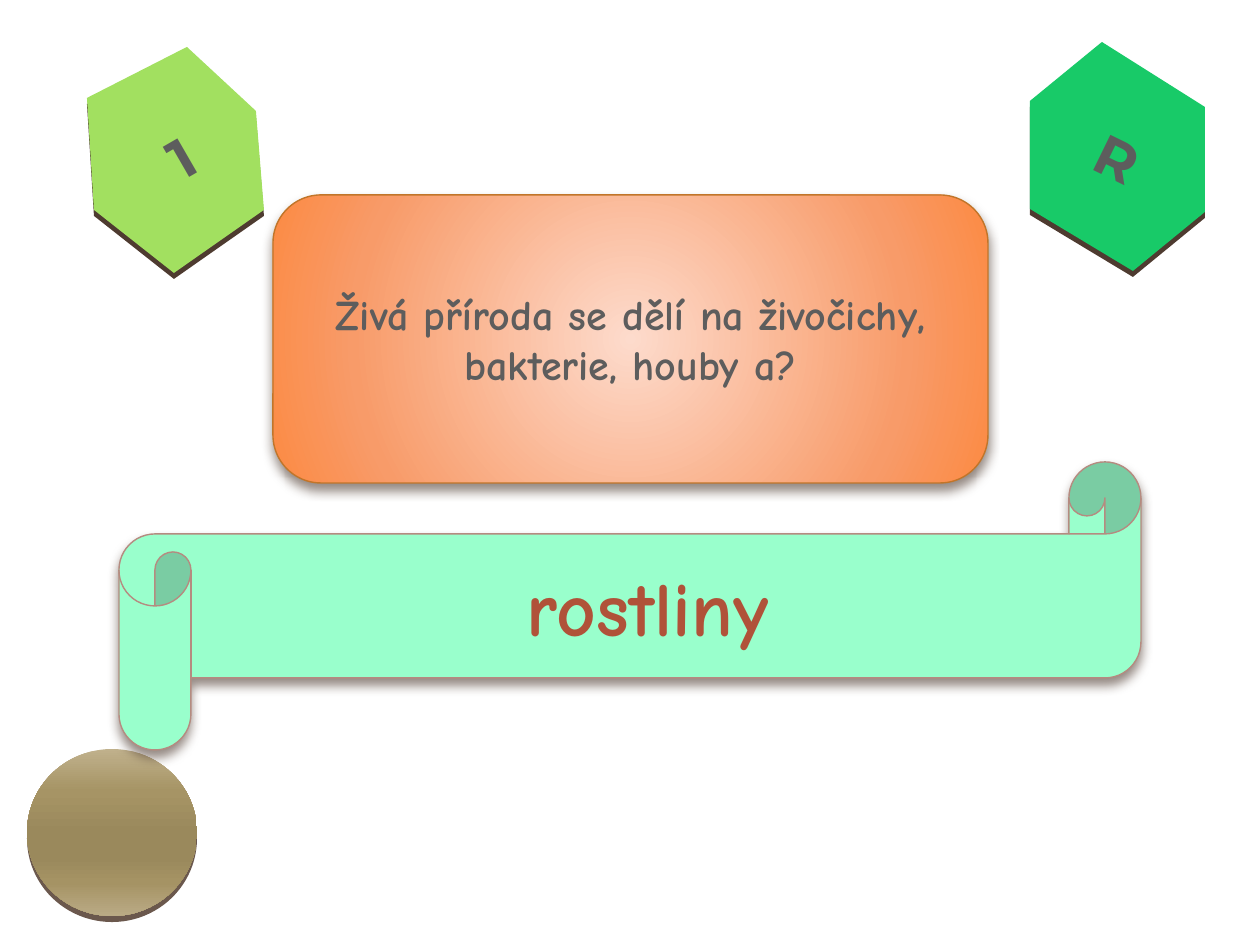
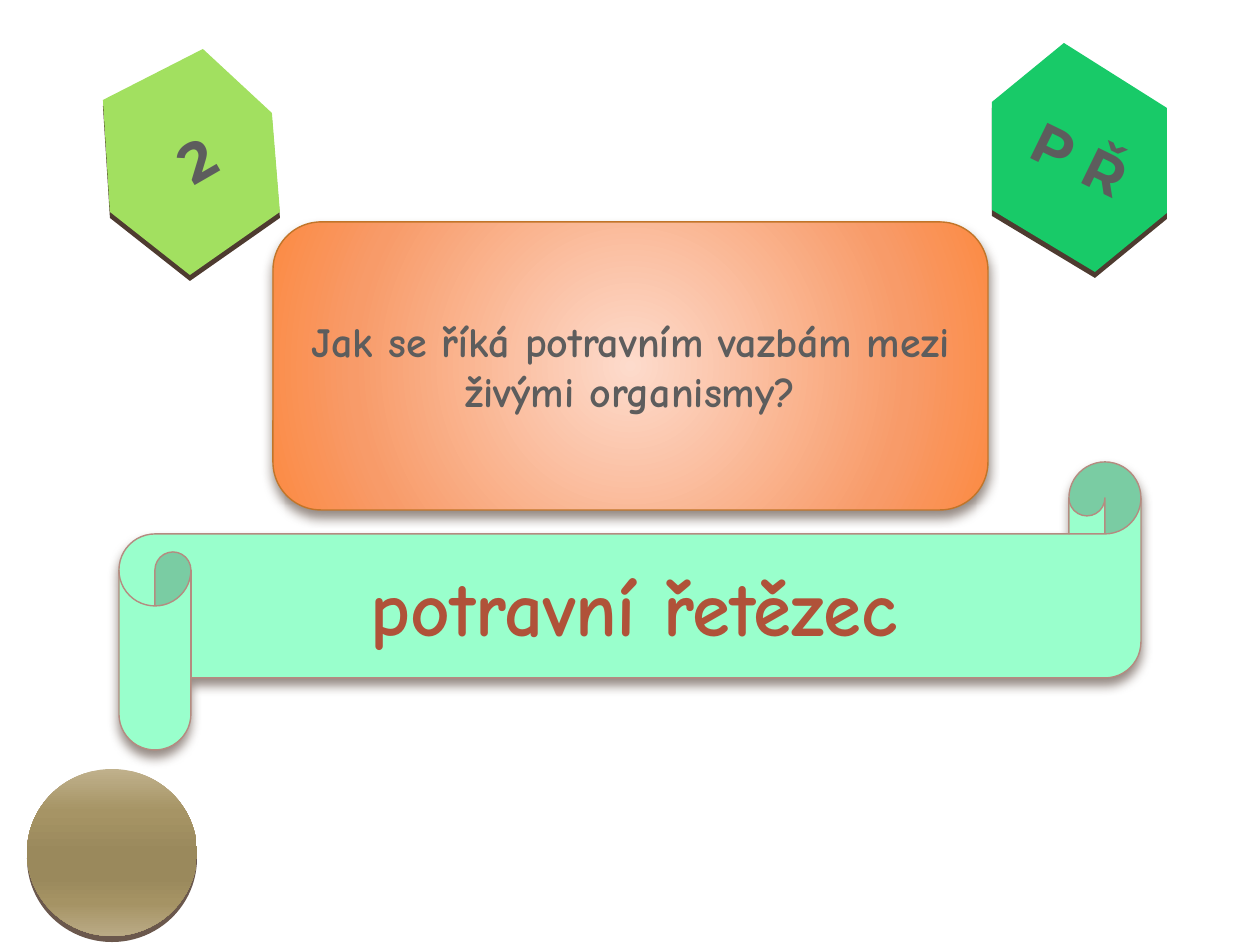
from typing import NamedTuple

import pptx
import pptx.dml.color
import pptx.enum.shapes
import pptx.enum.text
import pptx.oxml
import pptx.oxml.ns
import pptx.shapes.autoshape
import pptx.shapes.base
import pptx.slide
import pptx.util

EMU_PER_PX = 914400 / 126
SLIDE_WIDTH, SLIDE_HEIGHT = 1260, 945

RGBColor = pptx.dml.color.RGBColor
NUMBER_GREEN = RGBColor(0xA2, 0xE0, 0x60)
LETTER_GREEN = RGBColor(0x18, 0xCA, 0x68)
DARK_BROWN = RGBColor(0x4E, 0x3B, 0x30)
DISC_EDGE = RGBColor(0x6B, 0x58, 0x4D)
CARD_LINE = RGBColor(0xC1, 0x75, 0x29)
SCROLL_FILL = RGBColor(0x99, 0xFF, 0xCC)
SCROLL_LINE = RGBColor(0xB5, 0x8B, 0x80)
GRAY_TEXT = RGBColor(0x5D, 0x5D, 0x5D)
ANSWER_TEXT = RGBColor(0xB0, 0x52, 0x39)

CARD_STOPS = {0: "FDDBCC", 72: "F89B69", 100: "FC8A43"}
DISC_STOPS = {0: "C0B18C", 25: "A69465", 50: "9A895C", 65: "9A895C", 80: "A59364", 100: "BAAA85"}
RADIAL = '<a:path path="circle"><a:fillToRect l="50000" t="50000" r="50000" b="50000"/></a:path>'
VERTICAL = '<a:lin ang="5400000" scaled="0"/>'

BADGE_FONT = {"name": "Montserrat", "size": pptx.util.Pt(32), "bold": True}
QUESTION_FONT = {"name": "Comic Neue", "size": pptx.util.Pt(24), "bold": True}
ANSWER_FONT = {"name": "Comic Neue", "size": pptx.util.Pt(44), "bold": True}
EXTRUSION = 6


class Box(NamedTuple):
    left: int
    top: int
    width: int
    height: int


class BadgeStyle(NamedTuple):
    corners: tuple[tuple[int, int], ...]
    fill: RGBColor
    text_angle: int


class QuizSlide(NamedTuple):
    number: str
    number_center: tuple[int, int]
    letters: str
    letters_center: tuple[int, int]
    question: str
    question_top: int
    answer: str
    disc_top: int


NUMBER_BADGE = BadgeStyle(
    ((6, -110), (75, -46), (83, 53), (-7, 116), (-87, 53), (-94, -59)), NUMBER_GREEN, -30)
LETTER_BADGE = BadgeStyle(
    ((-16, -115), (87, -50), (87, 55), (15, 114), (-88, 52), (-88, -56)), LETTER_GREEN, 26)

QUIZ = (
    QuizSlide("1", (181, 157), "R", (1118, 157),
              "Živá příroda se dělí na živočichy, bakterie, houby a?", 195, "rostliny", 749),
    QuizSlide("2", (197, 159), "P Ř", (1080, 158),
              "Jak se říká potravním vazbám mezi živými organismy?", 222, "potravní řetězec ", 769),
)


def emu(px: int) -> int:
    return round(px * EMU_PER_PX)


def write_text(shape: pptx.shapes.base.BaseShape, text: str, font: dict, color: RGBColor) -> None:
    frame = shape.text_frame
    frame.word_wrap = True
    frame.vertical_anchor = pptx.enum.text.MSO_ANCHOR.MIDDLE
    paragraph = frame.paragraphs[0]
    paragraph.alignment = pptx.enum.text.PP_ALIGN.CENTER
    run = paragraph.add_run()
    run.text = text
    for attribute, value in font.items():
        setattr(run.font, attribute, value)
    run.font.color.rgb = color


def set_fill(shape: pptx.shapes.autoshape.Shape, color: RGBColor) -> None:
    shape.fill.solid()
    shape.fill.fore_color.rgb = color


def set_line(shape: pptx.shapes.autoshape.Shape, color: RGBColor) -> None:
    shape.line.color.rgb = color
    shape.line.width = pptx.util.Pt(0.79)


def set_gradient(shape: pptx.shapes.autoshape.Shape, stops: dict[int, str], direction: str) -> None:
    shape.fill.gradient()
    stop_xml = "".join(f'<a:gs pos="{position * 1000}"><a:srgbClr val="{color}"/></a:gs>'
                       for position, color in stops.items())
    gradient = pptx.oxml.parse_xml(
        f'<a:gradFill {pptx.oxml.ns.nsdecls("a")} rotWithShape="1">'
        f'<a:gsLst>{stop_xml}</a:gsLst>{direction}</a:gradFill>')
    properties = shape._element.spPr
    properties.replace(properties.find(pptx.oxml.ns.qn("a:gradFill")), gradient)


def add_shadow(shape: pptx.shapes.autoshape.Shape) -> None:
    effects = shape._element.spPr.find(pptx.oxml.ns.qn("a:effectLst"))
    effects.append(pptx.oxml.parse_xml(
        f'<a:outerShdw {pptx.oxml.ns.nsdecls("a")} blurRad="76200" dist="50800" dir="5400000" '
        f'rotWithShape="0"><a:srgbClr val="{DARK_BROWN}"><a:alpha val="60000"/></a:srgbClr>'
        '</a:outerShdw>'))


def add_preset(slide: pptx.slide.Slide, kind: pptx.enum.shapes.MSO_SHAPE,
               box: Box) -> pptx.shapes.autoshape.Shape:
    shape = slide.shapes.add_shape(kind, *map(emu, box))
    shape.shadow.inherit = False
    shape.line.fill.background()
    return shape


def add_badge(slide: pptx.slide.Slide, style: BadgeStyle, center: tuple[int, int],
              text: str) -> None:
    x, y = center
    for offset, color in ((EXTRUSION, DARK_BROWN), (0, style.fill)):
        builder = slide.shapes.build_freeform(*style.corners[0], scale=EMU_PER_PX)
        builder.add_line_segments(style.corners[1:], close=True)
        hexagon = builder.convert_to_shape(emu(x), emu(y + offset))
        hexagon.shadow.inherit = False
        hexagon.line.fill.background()
        set_fill(hexagon, color)
    label = slide.shapes.add_textbox(*map(emu, Box(x - 90, y - 50, 180, 100)))
    label.rotation = style.text_angle
    write_text(label, text, BADGE_FONT, GRAY_TEXT)


def add_question(slide: pptx.slide.Slide, top: int, text: str) -> None:
    card = add_preset(slide, pptx.enum.shapes.MSO_SHAPE.ROUNDED_RECTANGLE,
                      Box(273, top, 715, 288))
    set_gradient(card, CARD_STOPS, RADIAL)
    set_line(card, CARD_LINE)
    add_shadow(card)
    write_text(card, text, QUESTION_FONT, GRAY_TEXT)


def add_disc(slide: pptx.slide.Slide, top: int) -> None:
    for offset in (EXTRUSION, 0):
        disc = add_preset(slide, pptx.enum.shapes.MSO_SHAPE.OVAL,
                          Box(27, top + offset, 170, 167))
        if offset:
            set_fill(disc, DISC_EDGE)
        else:
            set_gradient(disc, DISC_STOPS, VERTICAL)


def add_answer(slide: pptx.slide.Slide, text: str) -> None:
    scroll = add_preset(slide, pptx.enum.shapes.MSO_SHAPE.HORIZONTAL_SCROLL,
                        Box(119, 462, 1022, 288))
    scroll.adjustments[0] = 0.25
    set_fill(scroll, SCROLL_FILL)
    set_line(scroll, SCROLL_LINE)
    add_shadow(scroll)
    write_text(scroll, text, ANSWER_FONT, ANSWER_TEXT)


def main() -> None:
    presentation = pptx.Presentation()
    presentation.slide_width = emu(SLIDE_WIDTH)
    presentation.slide_height = emu(SLIDE_HEIGHT)
    for quiz in QUIZ:
        slide = presentation.slides.add_slide(presentation.slide_layouts[6])
        add_badge(slide, LETTER_BADGE, quiz.letters_center, quiz.letters)
        add_badge(slide, NUMBER_BADGE, quiz.number_center, quiz.number)
        add_question(slide, quiz.question_top, quiz.question)
        add_disc(slide, quiz.disc_top)
        add_answer(slide, quiz.answer)
    presentation.save("out.pptx")


if __name__ == "__main__":
    main()
